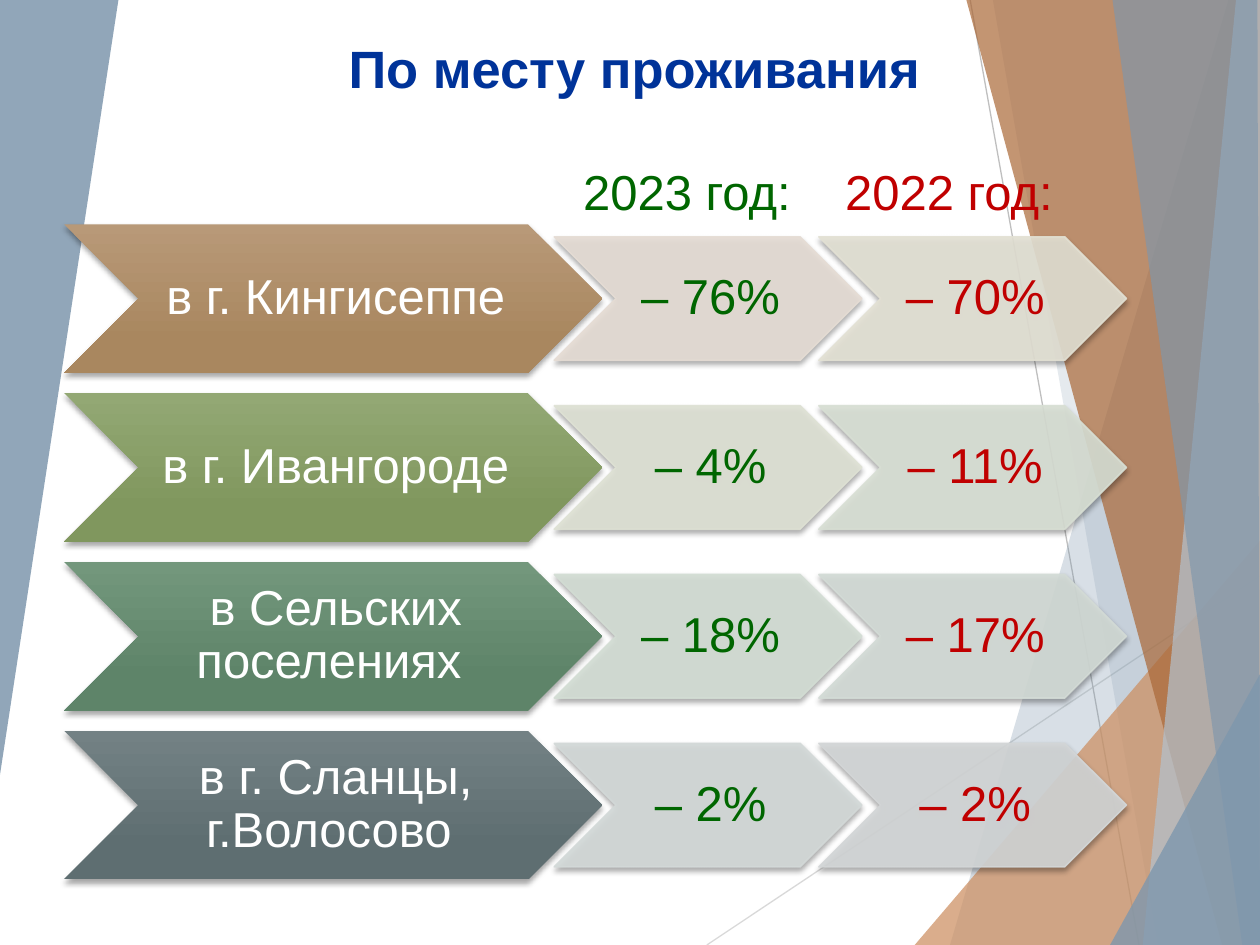
"""Build a slide that compares places of residence in 2023 and 2022."""
from lxml import etree
from pptx import Presentation
from pptx.dml.color import RGBColor
from pptx.enum.shapes import MSO_CONNECTOR, MSO_SHAPE
from pptx.enum.text import MSO_ANCHOR, PP_ALIGN
from pptx.oxml.ns import qn
from pptx.util import Inches, Pt

STRAIGHT = MSO_CONNECTOR.STRAIGHT
CHEVRON = MSO_SHAPE.CHEVRON
CENTER, LEFT = PP_ALIGN.CENTER, PP_ALIGN.LEFT
MIDDLE, BOTTOM = MSO_ANCHOR.MIDDLE, MSO_ANCHOR.BOTTOM

WIDTH, HEIGHT = 10, 7.5
COLORS = {
    "title": "003399", "label": "FFFFFF", "2023": "006600", "2022": "C00000",
    "blue": "7E97AD", "pale blue": "B2C1CE", "orange": "CC8E60",
    "brown": "AA6837", "light line": "D9D9D9", "line": "BFBFBF", "shadow": "000000",
}
LINES = [((5.61, 7.5), (10, 4.57), "light line"), ((7.7, 0), (9.04, 7.5), "line")]
FACETS = [
    ("blue", 30, [(9.75, 0), (7.54, HEIGHT), (WIDTH, HEIGHT), (WIDTH, 0)]),
    ("blue", 20, [(7.88, 0), (9.19, HEIGHT), (WIDTH, HEIGHT), (WIDTH, 0)]),
    ("orange", 72, [(7.26, HEIGHT), (WIDTH, 4.29), (WIDTH, HEIGHT)]),
    ("brown", 70, [(7.67, 0), (9.7, HEIGHT), (WIDTH, HEIGHT), (WIDTH, 0)]),
    ("pale blue", 70, [(9.81, 0), (9.07, HEIGHT), (WIDTH, HEIGHT), (WIDTH, 0)]),
    ("blue", 65, [(8.83, 0), (9.86, HEIGHT), (WIDTH, HEIGHT), (9.98, 0)]),
    ("blue", 80, [(8.81, HEIGHT), (WIDTH, 5.35), (WIDTH, HEIGHT)]),
    ("blue", 85, [(0, 0), (0.94, 0), (0, 6.15)]),
]
ROWS = [
    ("в г. Кингисеппе", ("B89978", "A9875F"), ("– 76%", "E5DCD4"), ("– 70%", "E3E1D4")),
    ("в г. Ивангороде", ("93A874", "80975E"), ("– 4%", "DEE1D4"), ("– 11%", "D8DFD4")),
    ("в Сельских поселениях ", ("73977C", "5E8469"), ("– 18%", "D3DDD4"), ("– 17%", "D3DBD6")),
    ("в г. Сланцы, г.Волосово ", ("738184", "5E6E71"), ("– 2%", "D3D9D8"), ("– 2%", "D3D6D7")),
]
YEARS = [("2023", 4.4, 4.53), ("2022", 6.5, 6.61)]
ROW_TOP, ROW_STEP = 1.78, 1.34
LABEL_SIZE, VALUE_SIZE = (4.27, 1.18), (2.44, 0.98)


def rgb(value):
    return RGBColor.from_string(value)


def set_alpha(shape, percent):
    for color in shape.element.spPr.iter(qn("a:srgbClr")):
        etree.SubElement(color, qn("a:alpha"), val=str(percent * 1000))


def add_shadow(shape):
    shape.shadow.inherit = False
    effects = shape.element.spPr.find(qn("a:effectLst"))
    shadow = etree.SubElement(effects, qn("a:outerShdw"), blurRad=str(Pt(3)),
                              dist=str(Pt(2)), dir="5400000", rotWithShape="0")
    color = etree.SubElement(shadow, qn("a:srgbClr"), val=COLORS["shadow"])
    etree.SubElement(color, qn("a:alpha"), val="35000")


def write_text(shape, text, color, size=28, bold=False, align=CENTER, anchor=MIDDLE):
    frame = shape.text_frame
    frame.vertical_anchor = anchor
    para = frame.paragraphs[0]
    para.text = text
    para.alignment = align
    para.font.name, para.font.size, para.font.bold = "Arial", Pt(size), bold
    para.font.color.rgb = rgb(COLORS[color])


def add_line(page, start, end, color):
    line = page.shapes.add_connector(STRAIGHT, *map(Inches, start + end))
    line.line.color.rgb = rgb(COLORS[color])
    line.line.width = Pt(0.75)
    etree.SubElement(line.element.spPr, qn("a:effectLst"))


def add_facet(page, color, opacity, points):
    corners = [(Inches(x), Inches(y)) for x, y in points]
    builder = page.shapes.build_freeform(*corners[0])
    builder.add_line_segments(corners[1:], close=True)
    facet = builder.convert_to_shape()
    facet.fill.solid()
    facet.fill.fore_color.rgb = rgb(COLORS[color])
    facet.line.fill.background()
    facet.shadow.inherit = False
    set_alpha(facet, opacity)


def add_chevron(page, left, top, size, text, color):
    chevron = page.shapes.add_shape(CHEVRON, *map(Inches, (left, top) + size))
    frame = chevron.text_frame
    frame.word_wrap = True
    frame.margin_left, frame.margin_right = Inches(0.04), 0
    frame.margin_top = frame.margin_bottom = Inches(0.02)
    write_text(chevron, text, color)
    frame.paragraphs[0].line_spacing = 0.9
    return chevron


def add_label(page, top, text, shades):
    chevron = add_chevron(page, 0.51, top, LABEL_SIZE, text, "label")
    chevron.fill.gradient()
    chevron.fill.gradient_angle = 270
    for stop, position, shade in zip(chevron.fill.gradient_stops, (0, 0.78), shades):
        stop.position = position
        stop.color.rgb = rgb(shade)
    chevron.line.fill.background()
    add_shadow(chevron)


def add_value(page, left, top, text, color, shade):
    chevron = add_chevron(page, left, top, VALUE_SIZE, text, color)
    chevron.fill.solid()
    chevron.fill.fore_color.rgb = rgb(shade)
    chevron.line.color.rgb = rgb(shade)
    chevron.line.width = Pt(1)
    set_alpha(chevron, 90)
    add_shadow(chevron)


def add_year(page, left, year):
    box = page.shapes.add_textbox(Inches(left), Inches(1.23), Inches(1.9), Inches(0.57))
    box.text_frame.word_wrap = False
    write_text(box, f"{year} год:", year, align=LEFT)


def place_title(page):
    title = page.shapes.title
    title.left, title.top = Inches(1.85), Inches(0.21)
    title.width, title.height = Inches(6.37), Inches(0.63)
    write_text(title, "По месту проживания", "title", size=30, bold=True, anchor=BOTTOM)


def main():
    deck = Presentation()
    deck.slide_width, deck.slide_height = Inches(WIDTH), Inches(HEIGHT)
    page = deck.slides.add_slide(deck.slide_layouts[5])
    for line in LINES:
        add_line(page, *line)
    for facet in FACETS:
        add_facet(page, *facet)
    place_title(page)
    for index, (place, shades, *values) in enumerate(ROWS):
        top = ROW_TOP + index * ROW_STEP
        add_label(page, top, place, shades)
        for (year, left, _), (value, shade) in zip(YEARS, values):
            add_value(page, left, top + 0.1, value, year, shade)
    for year, _, left in YEARS:
        add_year(page, left, year)
    deck.save("out.pptx")


if __name__ == "__main__":
    main()
